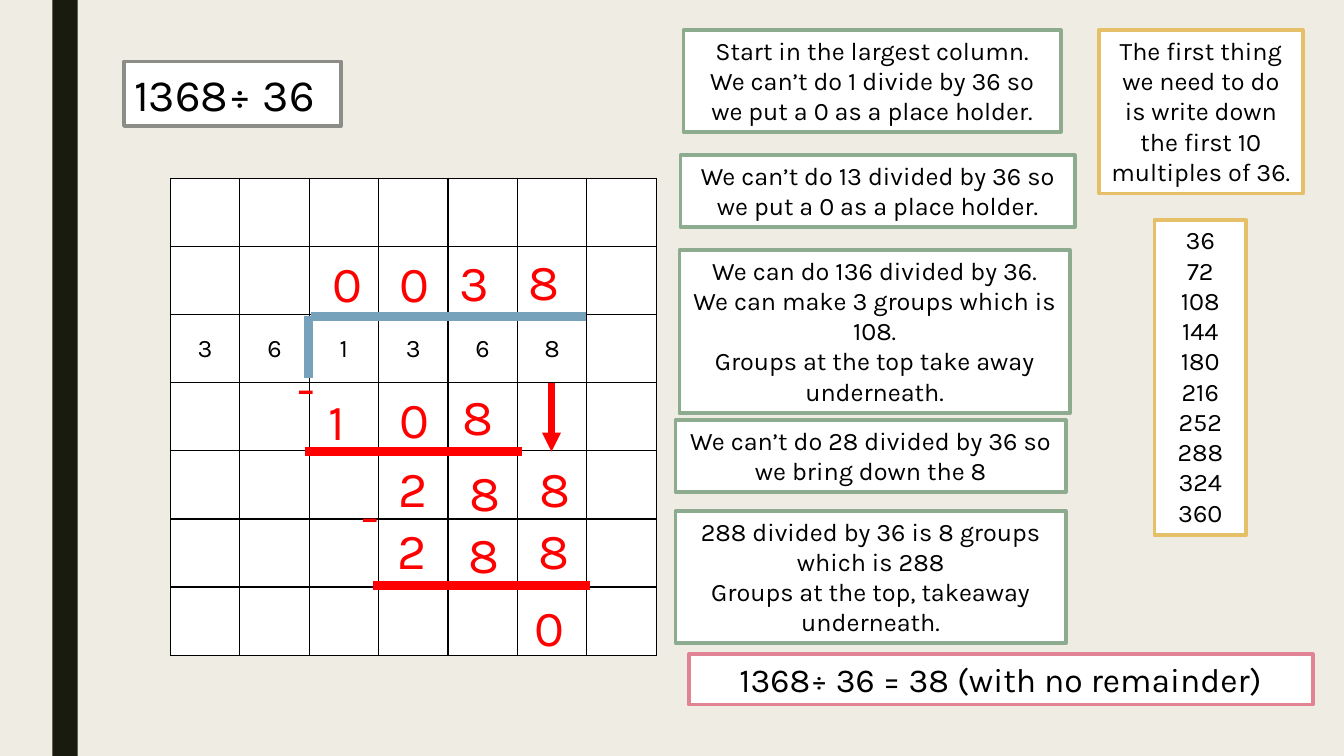
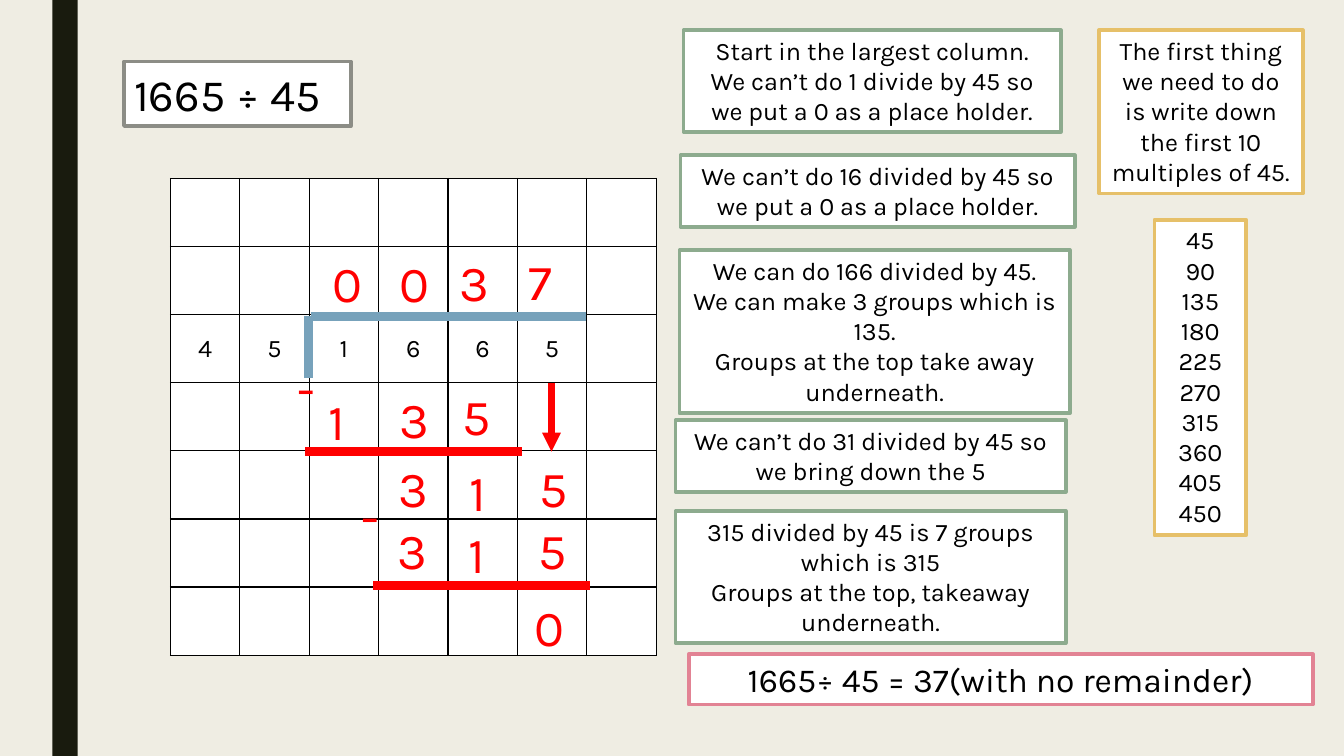
from dataclasses import dataclass

from lxml.etree import SubElement
from pptx import Presentation
from pptx.dml.color import RGBColor
from pptx.enum.shapes import MSO_CONNECTOR as Connector, MSO_SHAPE as Preset
from pptx.enum.text import MSO_ANCHOR as Anchor, MSO_AUTO_SIZE as AutoSize, PP_ALIGN as Align
from pptx.oxml.ns import qn
from pptx.util import Inches, Pt


@dataclass(frozen=True)
class Theme:
    font: str = "Karla"
    background: str = "EFEDE3"
    band: str = "191B0E"
    paper: str = "FFFFFF"
    ink: str = "000000"
    working: str = "FF0000"
    bracket: str = "77A2BB"
    question: str = "8C8D86"
    multiples: str = "E6C069"
    step: str = "8DAB8E"
    answer: str = "E28394"
    body_size: float = 18
    answer_size: float = 24
    title_size: float = 32
    digit_size: float = 36
    outline: float = 2.75
    grid: float = 1
    rule: float = 6
    arrow: float = 4.5


THEME = Theme()
ANSWER_SPOTS = [(3.2, 2.45), (3.86, 2.45), (4.46, 2.44), (5.14, 2.43)]
PRODUCT_SPOTS = [(3.16, 3.82), (3.86, 3.8), (4.49, 3.77)]
REMAINDER_SPOTS = [(3.85, 4.49), (4.56, 4.53), (5.25, 4.49)]
SUBTRACTED_SPOTS = [(3.84, 5.1), (4.55, 5.14), (5.24, 5.1)]
MINUS_SPOTS = [(2.85, 3.49), (3.49, 4.76)]
FINAL_SPOT = [(5.2, 5.86)]


def color(code):
    return RGBColor.from_string(code)


def write(frame, text, size=THEME.body_size, ink=THEME.ink, align=Align.CENTER, anchor=Anchor.TOP):
    frame.word_wrap = True
    frame.auto_size = AutoSize.NONE
    frame.vertical_anchor = anchor
    frame.text = text
    for paragraph in frame.paragraphs:
        paragraph.alignment = align
        paragraph.space_before = Pt(0)
        font = paragraph.font
        font.name, font.size = THEME.font, Pt(size)
        font.color.rgb = color(ink)


class Deck:
    def __init__(self, theme):
        self.theme = theme
        self.presentation = Presentation()
        self.presentation.slide_width = Inches(13.33)
        self.presentation.slide_height = Inches(7.5)
        backdrop = self.presentation.slide_master.background.fill
        backdrop.solid()
        backdrop.fore_color.rgb = color(theme.background)
        self.slide = None

    def start_slide(self):
        layout = self.presentation.slide_layouts[1]
        self.slide = self.presentation.slides.add_slide(layout)
        band = self.rectangle(0.52, 0, 0.25, 7.5)
        self.paint(band, self.theme.band)

    def rectangle(self, *place):
        return self.slide.shapes.add_shape(Preset.RECTANGLE, *map(Inches, place))

    def paint(self, shape, fill, outline=None):
        shape.shadow.inherit = False
        shape.fill.solid()
        shape.fill.fore_color.rgb = color(fill)
        if outline:
            shape.line.color.rgb = color(outline)
            shape.line.width = Pt(self.theme.outline)
        else:
            shape.line.fill.background()

    def box(self, place, text, outline, **style):
        panel = self.rectangle(*place)
        self.paint(panel, self.theme.paper, outline)
        write(panel.text_frame, text, **style)

    def fill_placeholder(self, panel, place, text, outline, **style):
        panel.left, panel.top, panel.width, panel.height = map(Inches, place)
        self.paint(panel, self.theme.paper, outline)
        write(panel.text_frame, text, **style)

    def title(self, text, width):
        self.fill_placeholder(self.slide.shapes.title, (1.23, 0.61, width, 0.64), text,
                              self.theme.question, size=self.theme.title_size, align=Align.LEFT)

    def number_list(self, place, numbers, outline):
        panel = self.slide.placeholders[1]
        self.fill_placeholder(panel, place, "\n".join(map(str, numbers)), outline)
        for paragraph in panel.text_frame.paragraphs:
            properties = paragraph._p.get_or_add_pPr()
            properties.set("marL", "0")
            properties.set("indent", "0")
            SubElement(properties, qn("a:buNone"))

    def digits(self, text, spots):
        for digit, (left, top) in zip(text, spots):
            label = self.slide.shapes.add_textbox(*map(Inches, (left, top, 0.71, 0.71)))
            write(label.text_frame, digit, size=self.theme.digit_size,
                  ink=self.theme.working, align=Align.LEFT)

    def line(self, start, end, ink, width, arrow=False):
        rule = self.slide.shapes.add_connector(Connector.STRAIGHT, *map(Inches, (*start, *end)))
        rule.line.color.rgb = color(ink)
        rule.line.width = Pt(width)
        if arrow:
            SubElement(rule.line._get_or_add_ln(), qn("a:tailEnd"), type="triangle")
        SubElement(rule._element.spPr, qn("a:effectLst"))

    def border(self, cell):
        properties = cell._tc.get_or_add_tcPr()
        for index, side in enumerate(("lnL", "lnR", "lnT", "lnB")):
            edge = SubElement(properties, qn(f"a:{side}"), w=str(Pt(self.theme.grid)))
            fill = SubElement(edge, qn("a:solidFill"))
            SubElement(fill, qn("a:srgbClr"), val=self.theme.ink)
            properties.insert(index, edge)

    def grid(self, place, size, number_row, numbers):
        table = self.slide.shapes.add_table(size, size, *map(Inches, place)).table
        table.first_row = table.horz_banding = False
        for cell in table.iter_cells():
            cell.fill.solid()
            cell.fill.fore_color.rgb = color(self.theme.paper)
            self.border(cell)
        for column, digit in enumerate(numbers):
            cell = table.cell(number_row, column)
            cell.vertical_anchor = Anchor.MIDDLE
            paragraph = cell.text_frame.paragraphs[0]
            paragraph.text = digit
            paragraph.alignment = Align.CENTER
            paragraph.font.name = self.theme.font
            paragraph.font.size = Pt(self.theme.body_size)
            paragraph.font.color.rgb = color(self.theme.ink)

    def save(self):
        self.presentation.save("out.pptx")


def add_division(deck, dividend, divisor, question, question_width, conclusion):
    theme = deck.theme
    quotient = dividend // divisor
    tens, ones = divmod(quotient, 10)
    leading, last_digit = divmod(dividend, 10)
    product = tens * divisor
    left_over = leading - product
    remaining = left_over * 10 + last_digit
    subtracted = ones * divisor

    deck.start_slide()
    deck.title(question, question_width)
    deck.grid((1.69, 1.77, 4.82, 4.73), 7, 2, f"{divisor}{dividend}")
    deck.line((3.06, 3.75), (3.06, 3.14), theme.bracket, theme.rule)
    deck.line((3.08, 3.14), (5.81, 3.14), theme.bracket, theme.rule)

    deck.box((10.9, 0.3, 2.02, 1.62),
             f"The first thing we need to do is write down the first 10 multiples of {divisor}.",
             theme.multiples)
    deck.number_list((11.45, 2.18, 0.91, 3.13),
                     [divisor * count for count in range(1, 11)], theme.multiples)

    steps = [
        ((6.78, 0.3, 3.74, 1.01),
         f"Start in the largest column.\nWe can’t do {dividend // 1000} divide by {divisor} so "
         "we put a 0 as a place holder."),
        ((6.75, 1.54, 3.91, 0.71),
         f"We can’t do {dividend // 100} divided by {divisor} so we put a 0 as a place holder."),
        ((6.74, 2.48, 3.87, 1.62),
         f"We can do {leading} divided by {divisor}.\n"
         f"We can make {tens} groups which is {product}.\n"
         "Groups at the top take away underneath."),
        ((6.7, 4.17, 3.87, 0.71),
         f"We can’t do {left_over} divided by {divisor} so we bring down the {last_digit}"),
        ((6.7, 5.07, 3.87, 1.31),
         f"{remaining} divided by {divisor} is {ones} groups which is {subtracted}\n"
         "Groups at the top, takeaway underneath."),
    ]
    for place, text in steps:
        deck.box(place, text, theme.step)

    working = [
        (f"{quotient:04}", ANSWER_SPOTS),
        (str(product), PRODUCT_SPOTS),
        (str(remaining), REMAINDER_SPOTS),
        (str(subtracted), SUBTRACTED_SPOTS),
        ("--", MINUS_SPOTS),
        (str(remaining - subtracted), FINAL_SPOT),
    ]
    for text, spots in working:
        deck.digits(text, spots)
    deck.line((3.03, 4.48), (5.18, 4.48), theme.working, theme.rule)
    deck.line((3.7, 5.81), (5.85, 5.81), theme.working, theme.rule)
    deck.line((5.47, 3.8), (5.47, 4.48), theme.working, theme.arrow, arrow=True)
    deck.box((6.83, 6.49, 6.19, 0.5), conclusion, theme.answer, size=theme.answer_size)


def main():
    deck = Deck(THEME)
    add_division(deck, 1368, 36, "1368÷ 36", 2.15, "1368÷ 36 = 38 (with no remainder)")
    add_division(deck, 1665, 45, "1665 ÷ 45", 2.25, "1665÷ 45 = 37(with no remainder)")
    deck.save()


if __name__ == "__main__":
    main()
